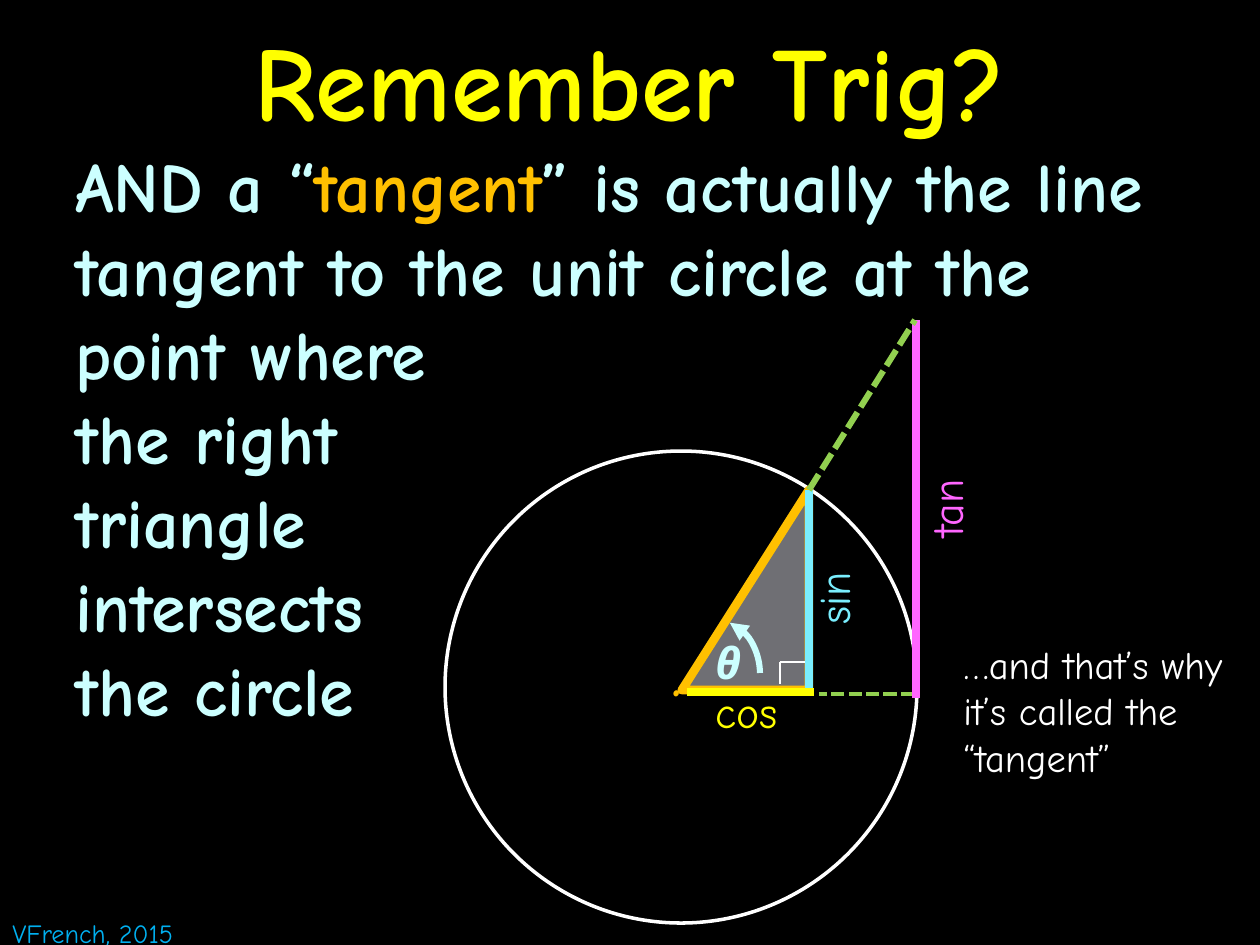
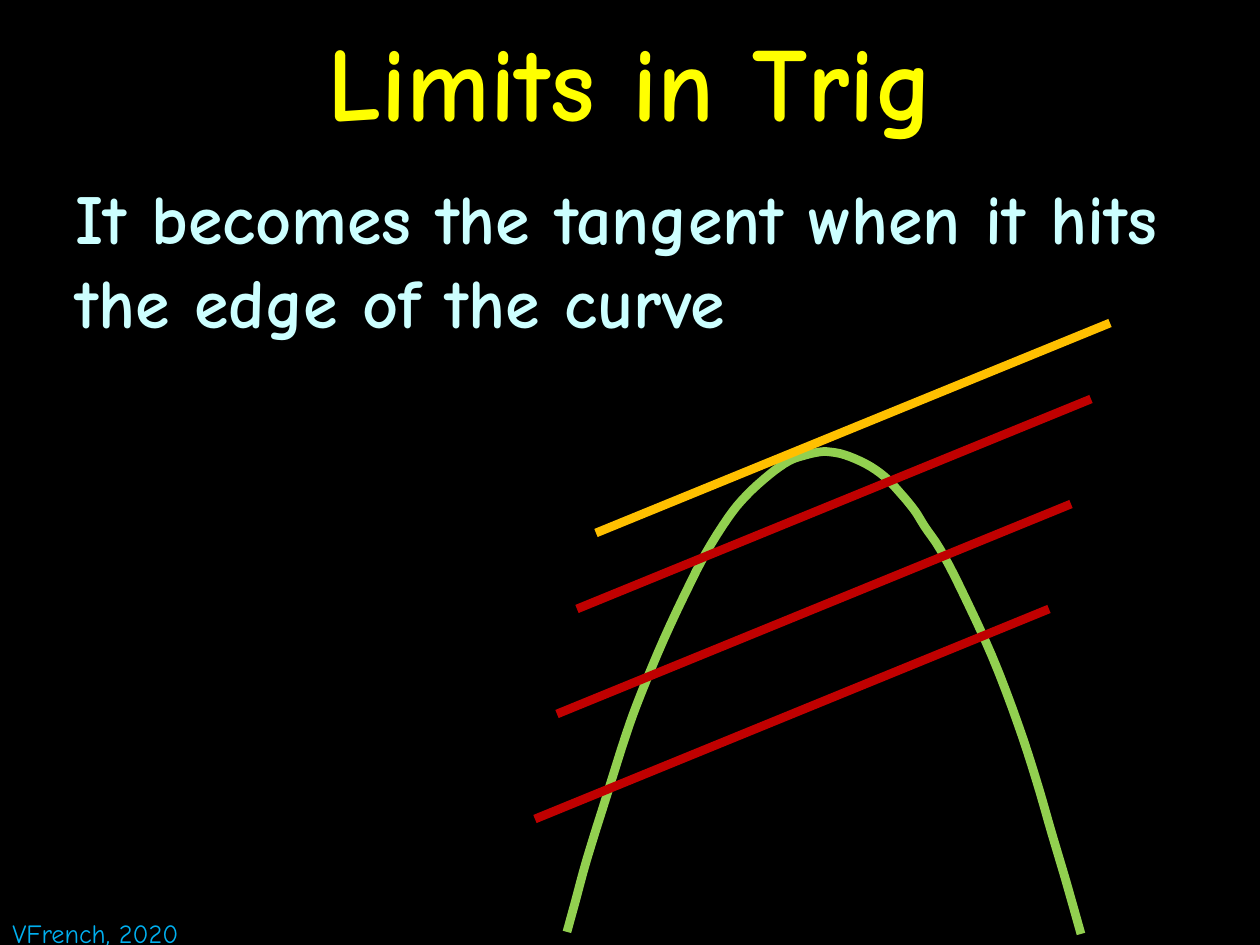
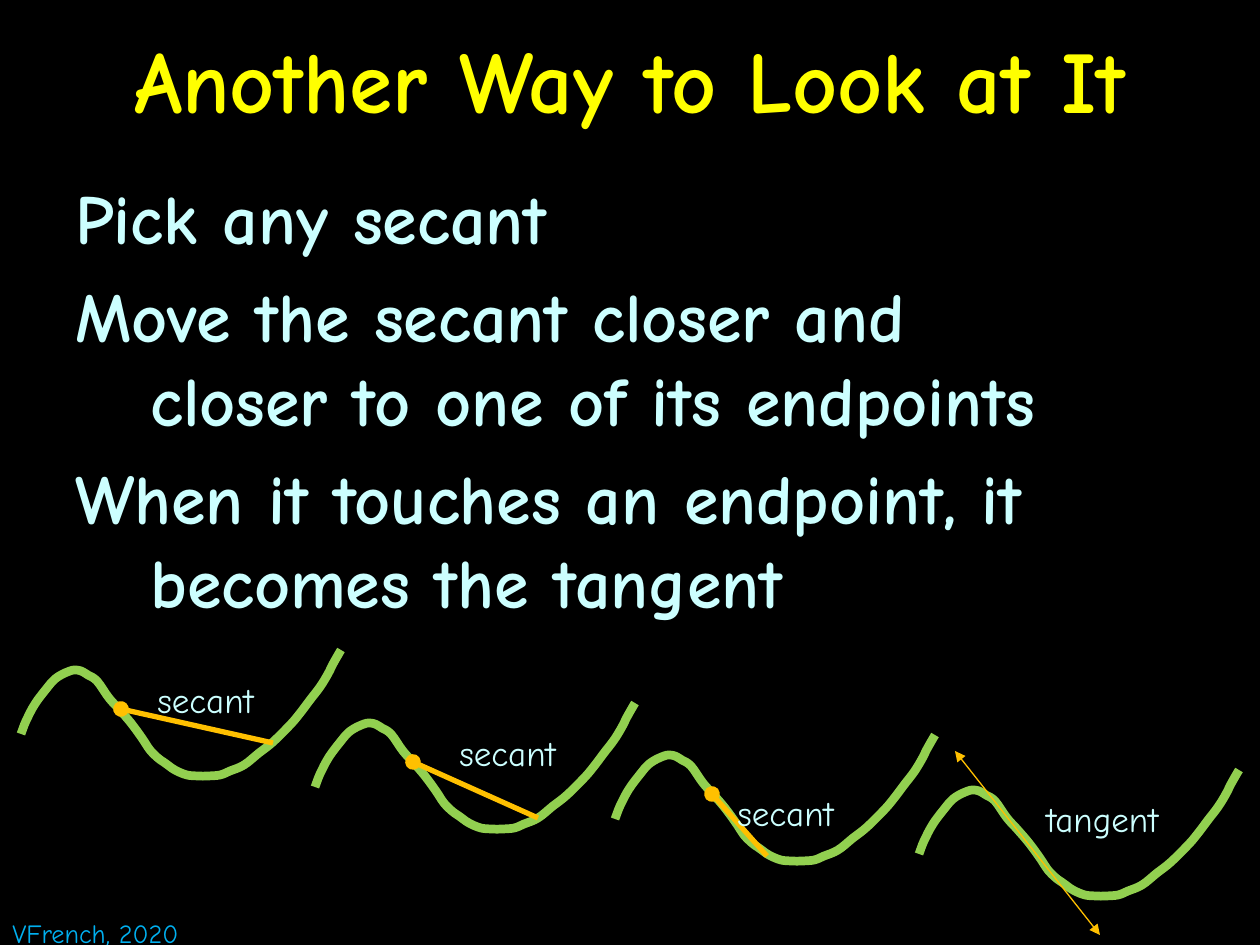
from dataclasses import dataclass

from lxml import etree
from pptx import Presentation
from pptx.dml.color import RGBColor
from pptx.enum.dml import MSO_LINE
from pptx.enum.shapes import MSO_CONNECTOR, MSO_SHAPE
from pptx.enum.text import MSO_ANCHOR, MSO_AUTO_SIZE, PP_ALIGN
from pptx.oxml.ns import qn
from pptx.util import Inches, Pt

PX = Inches(1) / 126
WIDTH, HEIGHT = 1260, 945


@dataclass(frozen=True)
class Theme:
    font: str = "Comic Neue"
    background: str = "000000"
    title: str = "FFFF00"
    body: str = "CCFFFF"
    accent: str = "FFC000"
    footer: str = "00B0F0"
    white: str = "FFFFFF"
    triangle: str = "6F6F74"
    sine: str = "7AEEFE"
    cosine: str = "FFFF00"
    tangent: str = "FF66FF"
    green: str = "92D050"
    secant: str = "C00000"
    title_size: int = 60
    long_title_size: int = 50
    body_size: int = 40
    math_size: int = 25
    note_size: int = 22
    label_size: int = 20
    footer_size: int = 15
    thick: int = 5


THEME = Theme()

PARABOLA = [
    (514, 483), (499, 430), (485, 383), (469, 328), (451, 273), (425, 205),
    (393, 136), (373, 98), (358, 76), (348, 60), (335, 44), (318, 26),
    (299, 13), (278, 4), (263, 1), (253, 1), (239, 4), (222, 10), (202, 24),
    (179, 45), (161, 67), (139, 102), (120, 139), (97, 188), (74, 243),
    (59, 284), (40, 344), (20, 408), (8, 452), (0, 481),
]
WAVE = [
    (0, 84), (5, 71), (14, 54), (26, 38), (33, 30), (40, 25), (49, 21),
    (54, 20), (60, 21), (67, 25), (76, 31), (88, 48), (98, 59), (110, 73),
    (121, 88), (129, 100), (137, 108), (144, 113), (154, 120), (166, 125),
    (178, 126), (186, 126), (199, 125), (209, 121), (223, 115), (238, 103),
    (252, 92), (270, 74), (280, 62), (289, 50), (299, 37), (307, 24),
    (312, 14), (320, 0),
]


def emu(px):
    return round(px * PX)


def shift(origin, *points):
    """Move points given relative to origin onto the slide."""
    return [(origin[0] + x, origin[1] + y) for x, y in points]


def spline(points, steps=4):
    """Fill in a Catmull-Rom curve through the points."""
    padded = [points[0], *points, points[-1]]
    curve = [points[0]]
    for a, b, c, d in zip(padded, padded[1:], padded[2:], padded[3:]):
        for step in range(1, steps + 1):
            t = step / steps
            curve.append(tuple(
                (2 * q + (r - p) * t + (2 * p - 5 * q + 4 * r - s) * t ** 2
                 + (3 * q - p - 3 * r + s) * t ** 3) / 2
                for p, q, r, s in zip(a, b, c, d)))
    return curve


def style_line(line, color, width, dash=None, head=None, tail=None):
    line.color.rgb = RGBColor.from_string(color)
    line.width = Pt(width)
    if dash:
        line.dash_style = dash
    for tag, kind in (("a:headEnd", head), ("a:tailEnd", tail)):
        if kind:
            etree.SubElement(line._get_or_add_ln(), qn(tag), type=kind)


def add_line(shapes, start, end, color, width=THEME.thick, **ends):
    connector = shapes.add_connector(
        MSO_CONNECTOR.STRAIGHT, *map(emu, (*start, *end)))
    etree.SubElement(connector._element.spPr, qn("a:effectLst"))
    style_line(connector.line, color, width, **ends)


def style_outline(shape, color, width=THEME.thick, fill=None, **ends):
    shape.shadow.inherit = False
    if fill:
        shape.fill.solid()
        shape.fill.fore_color.rgb = RGBColor.from_string(fill)
    else:
        shape.fill.background()
    style_line(shape.line, color, width, **ends)


def add_preset(shapes, kind, corner, size, color, **outline):
    shape = shapes.add_shape(kind, *map(emu, (*corner, *size)))
    style_outline(shape, color, **outline)
    return shape


def add_curve(shapes, origin, points):
    start, *rest = [(emu(x), emu(y)) for x, y in shift(origin, *spline(points))]
    builder = shapes.build_freeform(*start, scale=1.0)
    builder.add_line_segments(rest, close=False)
    style_outline(builder.convert_to_shape(), THEME.green)


def add_text(shapes, corner, size, lines, points, color, bold=False,
             italic=False, wrap=False, grow=True):
    """Write one paragraph per line; text between bars takes the accent colour."""
    box = shapes.add_textbox(*map(emu, (*corner, *size)))
    frame = box.text_frame
    frame.word_wrap = wrap
    frame.auto_size = (MSO_AUTO_SIZE.SHAPE_TO_FIT_TEXT if grow
                       else MSO_AUTO_SIZE.NONE)
    for index, line in enumerate(lines):
        paragraph = frame.add_paragraph() if index else frame.paragraphs[0]
        for part, piece in enumerate(line.split("|")):
            run = paragraph.add_run()
            run.text = piece
            font = run.font
            font.name, font.size = THEME.font, Pt(points)
            font.bold, font.italic = bold, italic
            font.color.rgb = RGBColor.from_string(
                THEME.accent if part % 2 else color)
    return box


def add_body(slide, top, lines):
    return add_text(slide.shapes, (63, top), (1134, 777), lines,
                    THEME.body_size, THEME.body, bold=True, wrap=True,
                    grow=False).text_frame


def new_slide(prs, title, year, title_size=THEME.title_size):
    """Add a slide with the shared background, title and footer."""
    slide = prs.slides.add_slide(prs.slide_layouts[6])
    slide.background.fill.solid()
    slide.background.fill.fore_color.rgb = RGBColor.from_string(THEME.background)
    heading = add_text(slide.shapes, (0, 0), (WIDTH, 158), [title], title_size,
                       THEME.title, bold=True, wrap=True, grow=False).text_frame
    heading.vertical_anchor = MSO_ANCHOR.MIDDLE
    heading.paragraphs[0].alignment = PP_ALIGN.CENTER
    add_text(slide.shapes, (0, 911), (217, 44), [f"VFrench, {year}"],
             THEME.footer_size, THEME.footer)
    return slide


def unit_circle(shapes, origin):
    """Draw the circle, its right triangle and the tangent line."""
    center, vertex, foot, top, base, tip = shift(
        origin, (237, 170), (364, 170), (364, 369), (470, 0), (471, 378), (471, 0))
    circle, dot, theta, arc, sine, cosine, tangent = shift(
        origin, (0, 131), (214, 300), (258, 310), (227, 300),
        (348, 243), (258, 359), (456, 151))
    side, corner, bottom, cos_end, cos_start, dash_end, dash_start = shift(
        origin, (364, 342), (335, 342), (335, 364), (369, 372), (242, 372),
        (469, 374), (374, 374))

    add_preset(shapes, MSO_SHAPE.OVAL, circle, (472, 472), THEME.white, width=2)
    add_text(shapes, dot, (43, 97), ["."], THEME.body_size, THEME.accent)
    triangle = add_preset(shapes, MSO_SHAPE.RIGHT_TRIANGLE, center, (127, 200),
                          THEME.accent, fill=THEME.triangle)
    triangle._element.spPr.xfrm.set("flipH", "1")
    add_line(shapes, side, corner, THEME.white, 0.75)
    add_line(shapes, corner, bottom, THEME.white, 0.75)
    add_text(shapes, theta, (63, 66), ["θ"], THEME.math_size, THEME.body,
             bold=True, italic=True, wrap=True)
    angle = add_preset(shapes, MSO_SHAPE.ARC, arc, (88, 108), THEME.body,
                       width=3.5, head="triangle")
    angle.adjustments[0], angle.adjustments[1] = 171.07, 215.22
    for name, place, width, color, turn in (
            ("sin", sine, 82, THEME.sine, 270),
            ("cos", cosine, 93, THEME.cosine, 0),
            ("tan", tangent, 92, THEME.tangent, 270)):
        add_text(shapes, place, (width, 66), [name], THEME.math_size,
                 color).rotation = turn
    add_line(shapes, vertex, foot, THEME.sine)
    add_line(shapes, dash_end, dash_start, THEME.green, 2.5,
             dash=MSO_LINE.SQUARE_DOT)
    add_line(shapes, base, tip, THEME.tangent)
    add_line(shapes, vertex, top, THEME.green, 3.5, dash=MSO_LINE.SQUARE_DOT)
    add_line(shapes, cos_end, cos_start, THEME.cosine)


def wave_panel(shapes, origin, name, label, start, end, **stroke):
    """Draw one wave with its secant or tangent, relative to origin."""
    start, end, label = shift(origin, start, end, label)
    add_curve(shapes, origin, WAVE)
    add_line(shapes, start, end, THEME.accent, **stroke)
    add_text(shapes, label, (151, 55), [name], THEME.label_size, THEME.body,
             wrap=True)


def remember_trig(prs):
    slide = new_slide(prs, "Remember Trig?", 2015)
    add_body(slide, 136, [
        "AND a “|tangent|” is actually the line tangent to the unit circle "
        "at the point where",
        "the right", "triangle", "intersects", "the circle"])
    add_text(slide.shapes, (951, 635), (309, 152),
             ["…and that’s why it’s called the “tangent”"],
             THEME.note_size, THEME.white, wrap=True)
    unit_circle(slide.shapes.add_group_shape().shapes, (445, 320))


def limits_in_trig(prs):
    slide = new_slide(prs, "Limits in Trig", 2020)
    add_body(slide, 168,
             ["It becomes the tangent when it hits the edge of the curve"])
    add_curve(slide.shapes, (567, 451), PARABOLA)
    for x, y, color in ((535, 819, THEME.secant), (557, 714, THEME.secant),
                        (577, 609, THEME.secant), (596, 533, THEME.accent)):
        add_line(slide.shapes, (x, y), (x + 514, y - 210), color)


def another_way(prs):
    slide = new_slide(prs, "Another Way to Look at It", 2020,
                      THEME.long_title_size)
    body = add_body(slide, 168, [
        "Pick any secant",
        "Move the secant closer and", "closer to one of its endpoints",
        "When it touches an endpoint, it", "becomes the tangent"])
    for index, paragraph in enumerate(body.paragraphs):
        if index in (2, 4):
            paragraph._p.get_or_add_pPr().set("marL", str(emu(75)))
        else:
            paragraph.space_before = Pt(8)

    secant = {"width": 3, "head": "oval"}
    tangent = {"width": 0.75, "head": "triangle", "tail": "triangle"}
    for origin, name, label, start, end, stroke in (
            ((919, 770), "tangent", (115, 21), (36, -19), (181, 165), tangent),
            ((21, 650), "secant", (124, 22), (100, 59), (252, 93), secant),
            ((315, 703), "secant", (132, 22), (98, 59), (223, 115), secant),
            ((615, 735), "secant", (110, 50), (97, 59), (152, 121), secant)):
        wave_panel(slide.shapes.add_group_shape().shapes, origin, name, label,
                   start, end, **stroke)


def main():
    prs = Presentation()
    prs.slide_width, prs.slide_height = emu(WIDTH), emu(HEIGHT)
    remember_trig(prs)
    limits_in_trig(prs)
    another_way(prs)
    prs.save("out.pptx")


if __name__ == "__main__":
    main()
